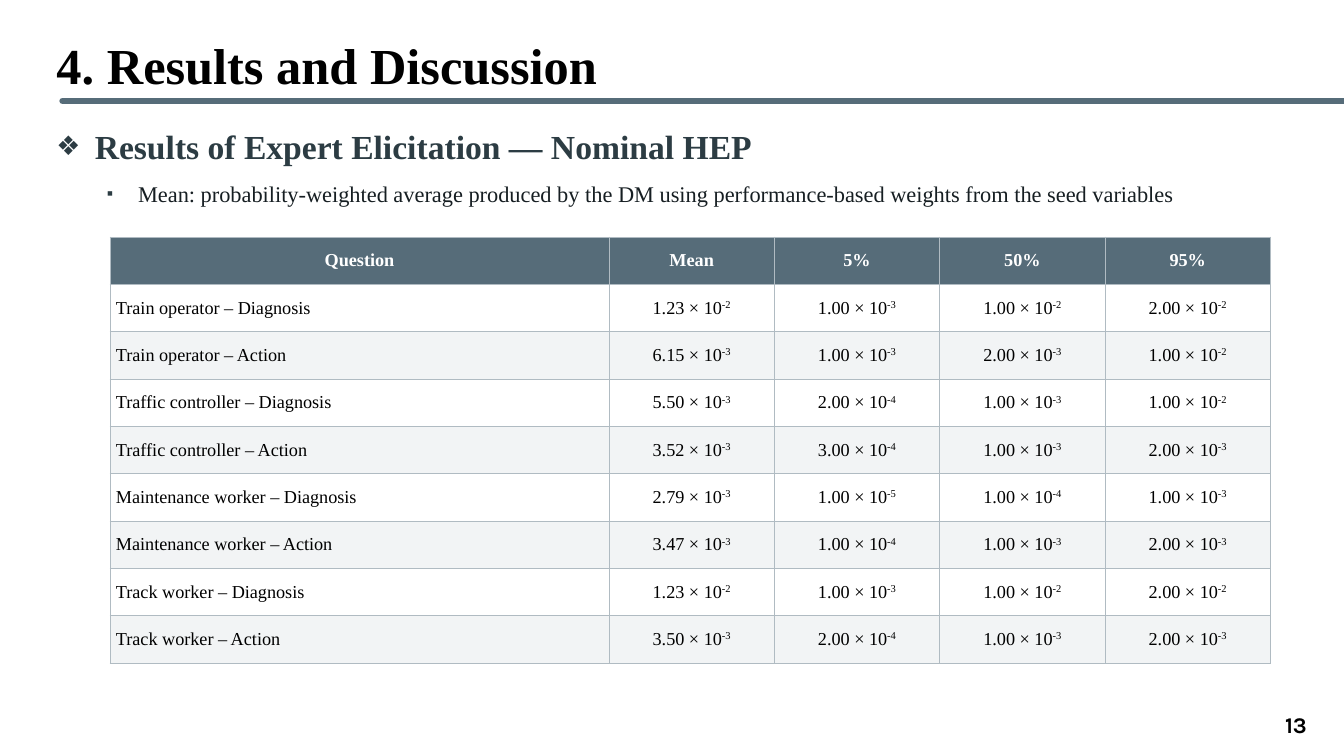
from dataclasses import dataclass
from lxml.etree import SubElement
from pptx import Presentation
from pptx.dml.color import RGBColor
from pptx.enum.shapes import MSO_CONNECTOR
from pptx.enum.text import MSO_ANCHOR as Anchor, MSO_AUTO_SIZE as AutoSize, PP_ALIGN as Align
from pptx.oxml.ns import qn
from pptx.util import Emu, Pt

PX = 9144
SERIF = "Times New Roman"
BLACK = RGBColor(0x00, 0x00, 0x00)
WHITE = RGBColor(0xFF, 0xFF, 0xFF)
SLATE = RGBColor(0x56, 0x6C, 0x79)
HEADING = RGBColor(0x2C, 0x3C, 0x43)
BODY = RGBColor(0x16, 0x1E, 0x22)
STRIPE = RGBColor(0xF2, 0xF4, 0xF5)
BORDER = RGBColor(0xB0, 0xBB, 0xC2)


@dataclass(frozen=True)
class Bullet:
    text: str
    level: int
    symbol: str
    left: int
    hanging: int
    before: int
    size: int
    color: RGBColor
    bold: bool


@dataclass(frozen=True)
class Row:
    question: str
    estimates: tuple[str, ...]


BULLETS = [
    Bullet("Results of Expert Elicitation — Nominal HEP", 0, "❖", 38, 38, 0, 24, HEADING, True),
    Bullet("Mean: probability-weighted average produced by the DM using "
           "performance-based weights from the seed variables", 1, "▪", 81, 31, 10, 16, BODY, False),
]
HEADERS = ["Question", "Mean", "5%", "50%", "95%"]
ROWS = [
    Row("Train operator – Diagnosis", ("1.23e-2", "1.00e-3", "1.00e-2", "2.00e-2")),
    Row("Train operator – Action", ("6.15e-3", "1.00e-3", "2.00e-3", "1.00e-2")),
    Row("Traffic controller – Diagnosis", ("5.50e-3", "2.00e-4", "1.00e-3", "1.00e-2")),
    Row("Traffic controller – Action", ("3.52e-3", "3.00e-4", "1.00e-3", "2.00e-3")),
    Row("Maintenance worker – Diagnosis", ("2.79e-3", "1.00e-5", "1.00e-4", "1.00e-3")),
    Row("Maintenance worker – Action", ("3.47e-3", "1.00e-4", "1.00e-3", "2.00e-3")),
    Row("Track worker – Diagnosis", ("1.23e-2", "1.00e-3", "1.00e-2", "2.00e-2")),
    Row("Track worker – Action", ("3.50e-3", "2.00e-4", "1.00e-3", "2.00e-3")),
]
COLUMN_WIDTHS = [495, 164, 164, 164, 164]
ROW_HEIGHT = 47


def px(length: int) -> Emu:
    return Emu(length * PX)


def place(shape, left: int, top: int, width: int, height: int) -> None:
    shape.left, shape.top, shape.width, shape.height = map(px, (left, top, width, height))


def style(para, size: int, color: RGBColor, bold: bool, name: str = SERIF) -> None:
    for span in para.runs:
        span.font.size = Pt(size)
        span.font.name = name
        span.font.bold = bold
        span.font.color.rgb = color


def add_rule(page) -> None:
    rule = page.shapes.add_connector(MSO_CONNECTOR.STRAIGHT, px(62), px(100), px(1333), px(100))
    rule.line.color.rgb = SLATE
    rule.line.width = Pt(4.5)
    rule.line._get_or_add_ln().set("cap", "rnd")
    SubElement(rule._element.spPr, qn("a:effectLst"))


def fill_title(title) -> None:
    place(title, 46, 22, 1260, 84)
    frame = title.text_frame
    frame.text = "4. Results and Discussion"
    frame.auto_size = AutoSize.NONE
    frame.vertical_anchor = Anchor.MIDDLE
    frame.paragraphs[0].alignment = Align.LEFT
    style(frame.paragraphs[0], 36, BLACK, True)


def fill_bullets(body) -> None:
    place(body, 46, 116, 1260, 98)
    frame = body.text_frame
    frame.text = "\n".join(bullet.text for bullet in BULLETS)
    frame.auto_size = AutoSize.NONE
    frame.margin_top = px(9)
    for para, bullet in zip(frame.paragraphs, BULLETS):
        props = para._p.get_or_add_pPr()
        props.set("marL", str(px(bullet.left)))
        props.set("indent", str(-px(bullet.hanging)))
        color = SubElement(props, qn("a:buClr"))
        SubElement(color, qn("a:srgbClr"), val=str(HEADING))
        SubElement(props, qn("a:buSzPct"), val="80000")
        SubElement(props, qn("a:buChar"), char=bullet.symbol)
        para.level = bullet.level
        para.space_before = Pt(bullet.before)
        style(para, bullet.size, bullet.color, bullet.bold)


def format_cell(cell, fill: RGBColor, color: RGBColor, bold: bool, align: Align) -> None:
    cell.margin_left = cell.margin_right = px(6)
    cell.margin_top = cell.margin_bottom = px(2)
    cell.vertical_anchor = Anchor.MIDDLE
    props = cell._tc.get_or_add_tcPr()
    for side in ("lnL", "lnR", "lnT", "lnB"):
        edge = SubElement(props, qn(f"a:{side}"), w=str(Pt(0.5)))
        solid = SubElement(edge, qn("a:solidFill"))
        SubElement(solid, qn("a:srgbClr"), val=str(BORDER))
    cell.fill.solid()
    cell.fill.fore_color.rgb = fill
    para = cell.text_frame.paragraphs[0]
    para.alignment = align
    style(para, 13, color, bold)


def write_estimate(cell, estimate: str) -> None:
    mantissa, exponent = estimate.split("e")
    para = cell.text_frame.paragraphs[0]
    para.text = f"{mantissa} × 10"
    power = para.add_run()
    power.text = exponent
    power._r.get_or_add_rPr().set("baseline", "30000")


def add_results(page) -> None:
    count = len(ROWS) + 1
    table = page.shapes.add_table(count, len(HEADERS), px(109), px(235),
                                  px(sum(COLUMN_WIDTHS)), px(ROW_HEIGHT * count)).table
    table.horz_banding = False
    for column, width in zip(table.columns, COLUMN_WIDTHS):
        column.width = px(width)
    for index, header in enumerate(HEADERS):
        cell = table.cell(0, index)
        cell.text_frame.text = header
        format_cell(cell, SLATE, WHITE, True, Align.CENTER)
    for number, row in enumerate(ROWS, 1):
        fill = WHITE if number % 2 else STRIPE
        question = table.cell(number, 0)
        question.text_frame.text = row.question
        format_cell(question, fill, BLACK, False, Align.LEFT)
        for index, estimate in enumerate(row.estimates, 1):
            cell = table.cell(number, index)
            write_estimate(cell, estimate)
            format_cell(cell, fill, BLACK, False, Align.CENTER)


def add_page_number(page) -> None:
    box = page.shapes.add_textbox(px(1231), px(699), px(75), px(40))
    frame = box.text_frame
    frame.word_wrap = True
    frame.vertical_anchor = Anchor.MIDDLE
    frame.text = "13"
    frame.paragraphs[0].alignment = Align.RIGHT
    style(frame.paragraphs[0], 16, BLACK, True, "Karla")


def main() -> None:
    deck = Presentation()
    deck.slide_width, deck.slide_height = px(1333), px(750)
    page = deck.slides.add_slide(deck.slide_layouts[1])
    add_rule(page)
    fill_title(page.shapes.title)
    fill_bullets(page.placeholders[1])
    add_results(page)
    add_page_number(page)
    deck.save("out.pptx")


if __name__ == "__main__":
    main()
